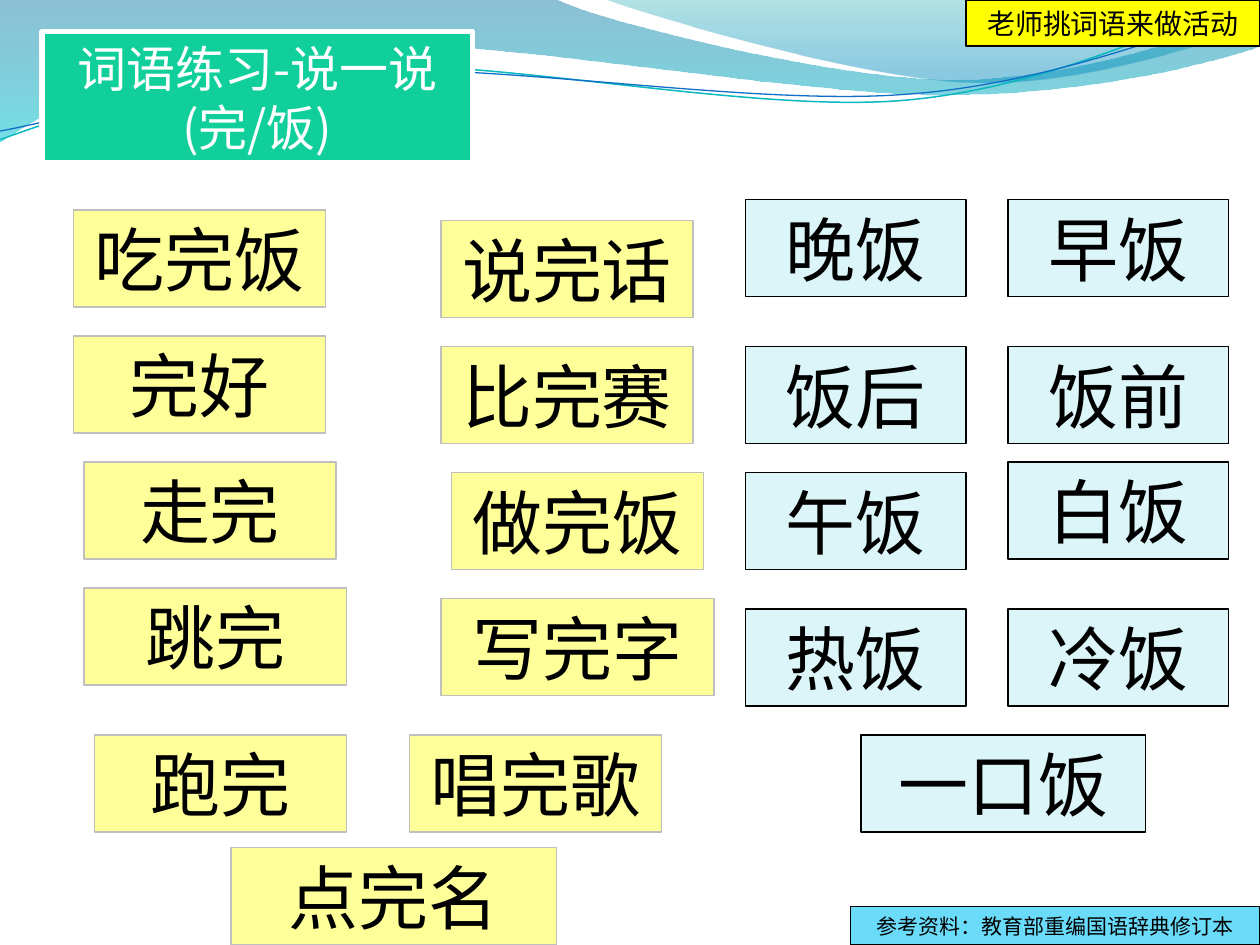
from math import cos, radians, sin

from lxml.etree import SubElement
from pptx import Presentation
from pptx.dml.color import RGBColor
from pptx.enum.shapes import MSO_SHAPE
from pptx.enum.text import MSO_ANCHOR, MSO_AUTO_SIZE, PP_ALIGN
from pptx.oxml.ns import qn
from pptx.util import Inches, Pt

FONT = "Noto Sans CJK SC"
BLACK, WHITE = RGBColor(0, 0, 0), RGBColor(255, 255, 255)
GREY = RGBColor(0xBF, 0xBF, 0xBF)
GREEN = RGBColor(0x10, 0xCF, 0x9B)
PALE_YELLOW = RGBColor(0xFF, 0xFF, 0x99)
PALE_BLUE = RGBColor(0xDB, 0xF5, 0xF9)
SKY = RGBColor(0x6B, 0xDB, 0xFA)
YELLOW = RGBColor(0xFF, 0xFF, 0)
TEAL_LINE, BLUE_LINE = RGBColor(0x0A, 0xB8, 0xBF), RGBColor(0x0F, 0x6F, 0xC6)
DEEP_BLUE, CYAN = RGBColor(0, 0x74, 0xA1), RGBColor(0, 0xC6, 0xCF)
TEAL, MID_BLUE = RGBColor(0, 0xA1, 0xA9), RGBColor(0, 0x8B, 0xBF)

# Grid of 120 columns by 90 rows, twelve to the inch
CELL = Inches(1) / 12
CARD_ROWS = 9.25

TITLE = ("词语练习-说一说(完/饭)", 4, 3, 41, 12.5)
# Word, column, row, columns wide
WAN_CARDS = [
    ("吃完饭", 7, 20, 24), ("完好", 7, 32, 24), ("走完", 8, 44, 24),
    ("跳完", 8, 56, 25), ("跑完", 9, 70, 24),
    ("说完话", 42, 21, 24), ("比完赛", 42, 33, 24), ("做完饭", 43, 45, 24),
    ("写完字", 42, 57, 26), ("唱完歌", 39, 70, 24), ("点完名", 22, 80.75, 31),
]
FAN_CARDS = [
    ("晚饭", 71, 19, 21), ("饭后", 71, 33, 21), ("午饭", 71, 45, 21), ("热饭", 71, 58, 21),
    ("早饭", 96, 19, 21), ("饭前", 96, 33, 21), ("白饭", 96, 44, 21), ("冷饭", 96, 58, 21),
    ("一口饭", 82, 70, 27.1),
]
# Text, column, row, columns wide, rows high, size, fill
LABELS = [
    ("参考资料：教育部重编国语辞典修订本", 81, 86.35, 39, 3.65, 12, SKY),
    ("老师挑词语来做活动", 92, 0, 28, 4.4, 16, YELLOW),
]

# Waves in inches: box, then the outline, where a pair is a line's end and
# six numbers are a Bézier curve
# Bands end with gradient stops: position, colour, opacity in percent
BANDS = [
    ((-0.01, -0.01, 10.02, 1.14),
     [(0, 0), (4.4, -0.01), (4.76, 0.17, 6.64, 0.63, 7.58, 0.63),
      (8.53, 0.63, 9.58, 0.26, 10, 0.09), (10.01, 0.36),
      (9.83, 0.44, 8.7, 0.76, 7.46, 0.75), (6.22, 0.75, 3.82, 0.28, 2.57, 0.34),
      (1.29, 0.36, 0.46, 0.83, -0.01, 1.13), (0, 0)],
     [(0, DEEP_BLUE, 45), (1, CYAN, 55)]),
    ((4.79, -0.01, 5.21, 0.7),
     [(4.79, -0.01), (5.09, 0.11, 6.82, 0.62, 7.69, 0.65),
      (8.56, 0.69, 9.61, 0.32, 10, 0.21), (10, 0), (4.79, -0.01)],
     [(0, TEAL, 30), (0.8, MID_BLUE, 45)]),
]
# Strands end with line colour and width
STRAND_TURN = -2.7
STRANDS = [
    ((-0.02, 0.22, 10.02, 0.71),
     [(0, 1.11), (0.48, 0.93, 1.58, 0.57, 2.77, 0.52),
      (3.95, 0.47, 5.93, 0.89, 7.13, 0.8), (8.33, 0.71, 9.38, 0.15, 9.98, -0.02)],
     TEAL_LINE, 0.85),
    ((-0.02, 0.3, 10.03, 0.58),
     [(0, 1.04), (0.47, 0.96, 1.64, 0.61, 2.83, 0.56),
      (4.03, 0.51, 5.97, 0.84, 7.17, 0.75), (8.36, 0.67, 9.41, 0.21, 10, 0.06)],
     BLUE_LINE, 0.75),
]


def add_outline(slide, box, outline, turn=0, close=False):
    """Draw a curved outline; its points are given as seen after the turn."""
    left, top, width, height = box
    builder = slide.shapes.build_freeform(0, 0, scale=Inches(1))
    builder.add_line_segments([(1, 1)], close=False)
    sp = builder.convert_to_shape()
    sp.left, sp.top, sp.width, sp.height = (Inches(n) for n in box)
    sp.rotation = turn
    sp.shadow.inherit = False

    path = next(sp._element.iter(qn("a:path")))
    for child in list(path):
        path.remove(child)
    path.set("w", str(Inches(width)))
    path.set("h", str(Inches(height)))
    c, s = cos(radians(-turn)), sin(radians(-turn))
    for i, seg in enumerate(outline):
        tag = "a:moveTo" if i == 0 else "a:lnTo" if len(seg) == 2 else "a:cubicBezTo"
        step = SubElement(path, qn(tag))
        for x, y in zip(seg[::2], seg[1::2]):
            dx, dy = x - left - width / 2, y - top - height / 2
            SubElement(step, qn("a:pt"), x=str(Inches(width / 2 + dx * c - dy * s)),
                       y=str(Inches(height / 2 + dx * s + dy * c)))
    if close:
        SubElement(path, qn("a:close"))
    return sp


def add_band(slide, box, outline, stops):
    sp = add_outline(slide, box, outline, close=True)
    sp.line.fill.background()
    sp.fill.gradient()
    sp.fill.gradient_angle = 270
    for stop, (position, colour, _) in zip(sp.fill.gradient_stops, stops):
        stop.position, stop.color.rgb = position, colour
    for clr, (_, _, opacity) in zip(sp._element.spPr.iter(qn("a:srgbClr")), stops):
        SubElement(clr, qn("a:alpha"), val=str(opacity * 1000))


def add_strand(slide, box, outline, colour, width):
    sp = add_outline(slide, box, outline, STRAND_TURN)
    sp.fill.background()
    sp.line.color.rgb, sp.line.width = colour, Pt(width)


def format_box(sp, text, col, row, cols, rows, size, fill, line, width=0.75, colour=BLACK):
    sp.left, sp.top, sp.width, sp.height = (round(n * CELL) for n in (col, row, cols, rows))
    sp.fill.solid()
    sp.fill.fore_color.rgb = fill
    sp.line.color.rgb, sp.line.width = line, Pt(width)
    tf = sp.text_frame
    tf.text = text
    tf.word_wrap, tf.auto_size = True, MSO_AUTO_SIZE.NONE
    tf.vertical_anchor = MSO_ANCHOR.MIDDLE
    p = tf.paragraphs[0]
    p.alignment = PP_ALIGN.CENTER
    p.font.size, p.font.name, p.font.color.rgb = Pt(size), FONT, colour
    SubElement(p._p.pPr.find(qn("a:defRPr")), qn("a:ea"), typeface=FONT)


def add_box(slide, *args):
    sp = slide.shapes.add_shape(MSO_SHAPE.RECTANGLE, 0, 0, 0, 0)
    sp.shadow.inherit = False
    format_box(sp, *args)


def main():
    prs = Presentation()
    prs.slide_width, prs.slide_height = Inches(10), Inches(7.5)
    slide = prs.slides.add_slide(prs.slide_layouts[5])

    # Waves along the top
    for band in BANDS:
        add_band(slide, *band)
    for strand in STRANDS:
        add_strand(slide, *strand)

    # Title, in front of the waves
    title = slide.shapes.title
    format_box(title, *TITLE, 28, GREEN, WHITE, 3, WHITE)
    slide.shapes._spTree.append(title._element)

    # Word cards
    for cards, fill, line in ((WAN_CARDS, PALE_YELLOW, GREY), (FAN_CARDS, PALE_BLUE, BLACK)):
        for card in cards:
            add_box(slide, *card, CARD_ROWS, 40, fill, line)

    # Corner labels
    for label in LABELS:
        add_box(slide, *label, BLACK)

    prs.save("out.pptx")


if __name__ == "__main__":
    main()
